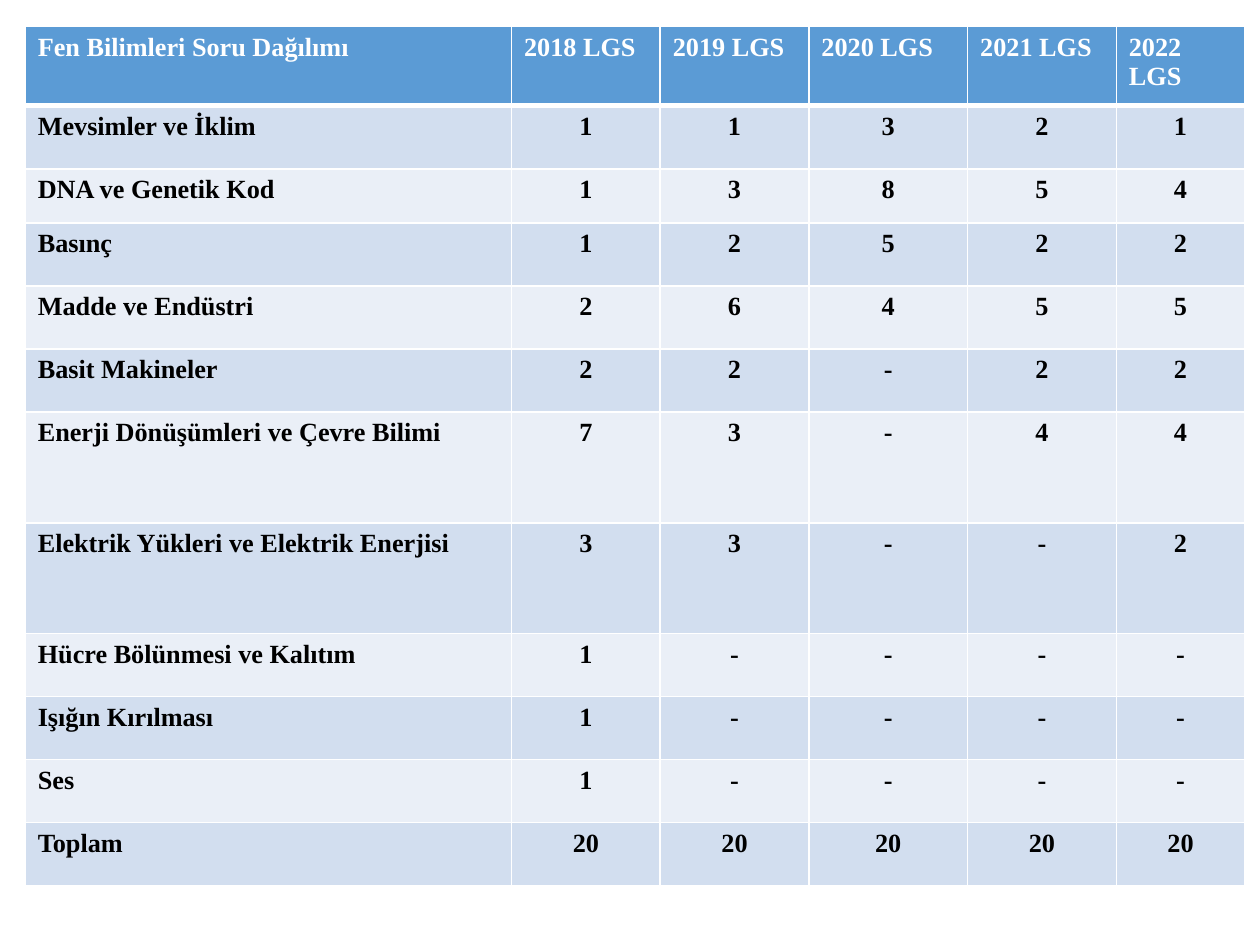
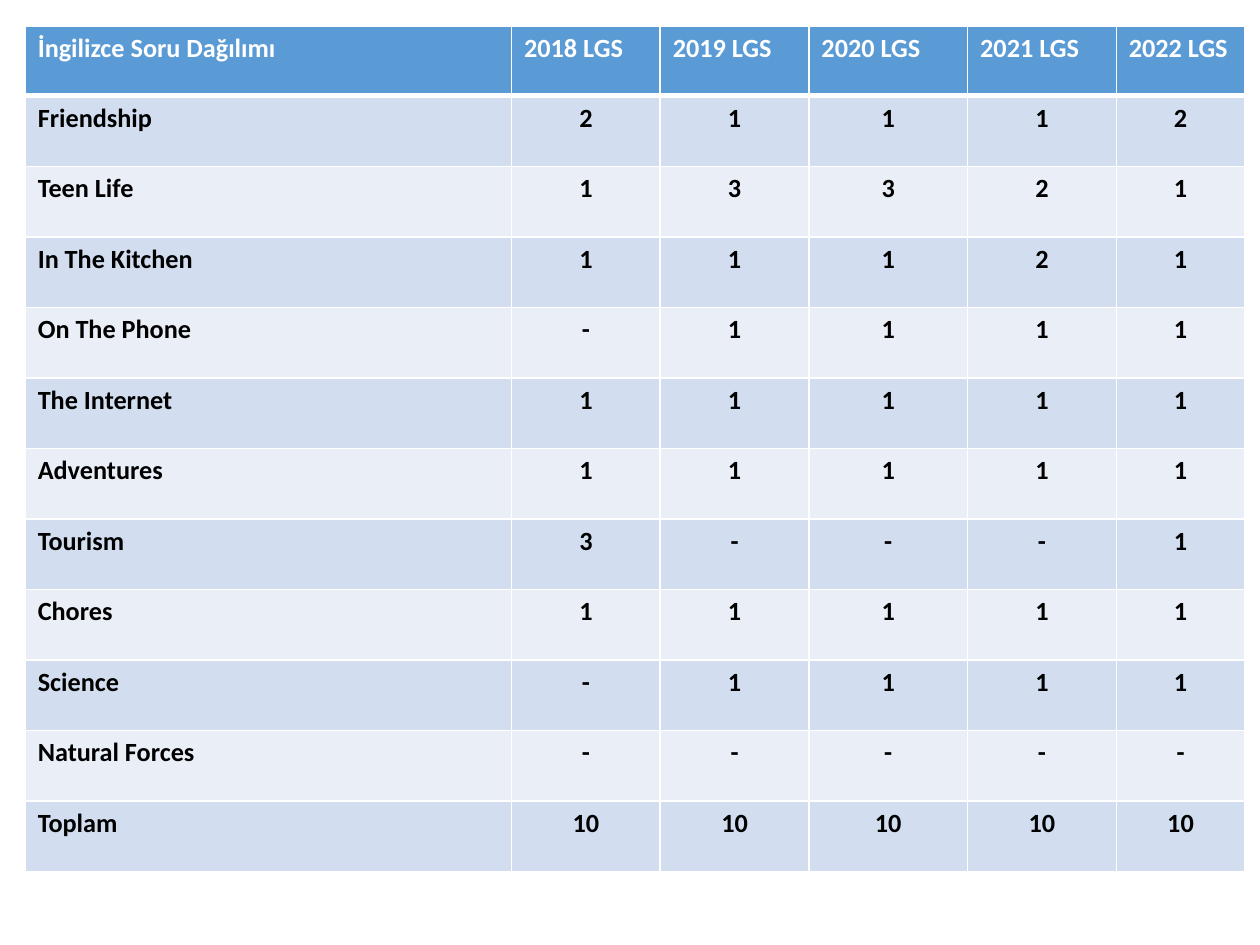
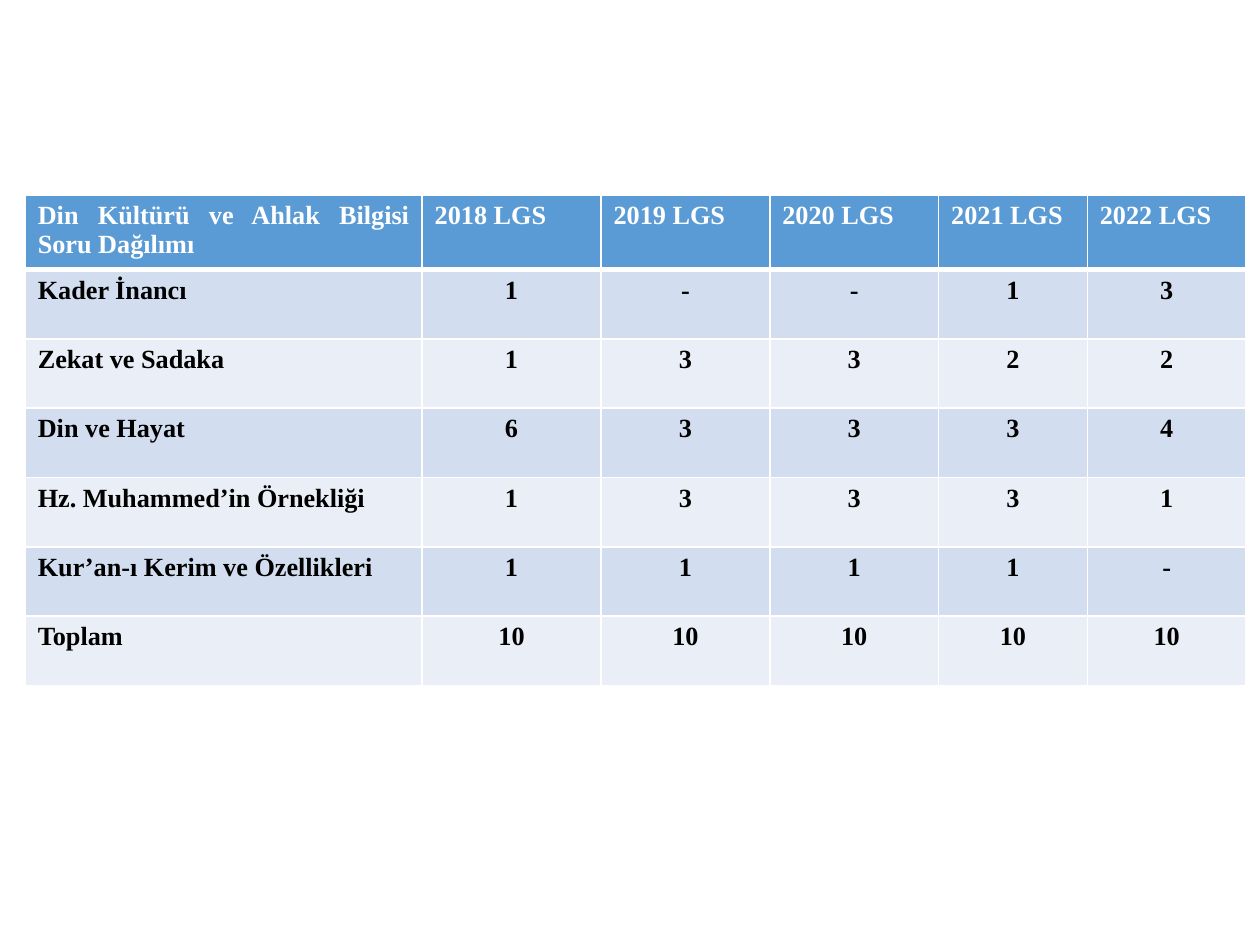
from dataclasses import dataclass

from lxml import etree
from pptx import Presentation
from pptx.dml.color import RGBColor
from pptx.enum.text import PP_ALIGN
from pptx.oxml.ns import qn
from pptx.util import Inches, Pt

LEFT, CENTER, JUSTIFY = PP_ALIGN.LEFT, PP_ALIGN.CENTER, PP_ALIGN.JUSTIFY

COLORS = {
    "header": "5B9BD5",
    "odd_row": "D2DEEF",
    "even_row": "EAEFF7",
    "border": "FFFFFF",
    "header_text": "FFFFFF",
    "body_text": "000000",
}
EXAMS = [f"{year} LGS" for year in range(2018, 2023)]
TABLE_LEFT = 0.2
FONT_SIZE = 15
THIN, THICK = 1, 3
BLANK_LAYOUT = 6
WIDE_TOPIC_COLUMNS = [3.86, 1.18, 1.18, 1.26, 1.18, 1.02]


@dataclass
class Topic:
    name: str
    counts: str


@dataclass
class Distribution:
    title: str
    font: str
    top: float
    column_widths: list[float]
    row_heights: list[float]
    topics: list[Topic]


DISTRIBUTIONS = [
    Distribution(
        "Fen Bilimleri Soru Dağılımı", "Times New Roman", 0.21, WIDE_TOPIC_COLUMNS,
        [0.63, 0.5, 0.43] + [0.5] * 3 + [0.88] * 2 + [0.5] * 4,
        [
            Topic("Mevsimler ve İklim", "1 1 3 2 1"),
            Topic("DNA ve Genetik Kod", "1 3 8 5 4"),
            Topic("Basınç", "1 2 5 2 2"),
            Topic("Madde ve Endüstri", "2 6 4 5 5"),
            Topic("Basit Makineler", "2 2 - 2 2"),
            Topic("Enerji Dönüşümleri ve Çevre Bilimi", "7 3 - 4 4"),
            Topic("Elektrik Yükleri ve Elektrik Enerjisi", "3 3 - - 2"),
            Topic("Hücre Bölünmesi ve Kalıtım", "1 - - - -"),
            Topic("Işığın Kırılması", "1 - - - -"),
            Topic("Ses", "1 - - - -"),
            Topic("Toplam", "20 20 20 20 20"),
        ],
    ),
    Distribution(
        "İngilizce Soru Dağılımı", "Calibri", 0.21, WIDE_TOPIC_COLUMNS,
        [0.55] + [0.56] * 11,
        [
            Topic("Friendship", "2 1 1 1 2"),
            Topic("Teen Life", "1 3 3 2 1"),
            Topic("In The Kitchen", "1 1 1 2 1"),
            Topic("On The Phone", "- 1 1 1 1"),
            Topic("The Internet", "1 1 1 1 1"),
            Topic("Adventures", "1 1 1 1 1"),
            Topic("Tourism", "3 - - - 1"),
            Topic("Chores", "1 1 1 1 1"),
            Topic("Science", "- 1 1 1 1"),
            Topic("Natural Forces", "- - - - -"),
            Topic("Toplam", "10 10 10 10 10"),
        ],
    ),
    Distribution(
        "Din Kültürü ve Ahlak Bilgisi Soru Dağılımı", "Times New Roman", 1.55,
        [3.15, 1.42, 1.34, 1.34, 1.18, 1.26],
        [0.59] + [0.55] * 6,
        [
            Topic("Kader İnancı", "1 - - 1 3"),
            Topic("Zekat ve Sadaka", "1 3 3 2 2"),
            Topic("Din ve Hayat", "6 3 3 3 4"),
            Topic("Hz. Muhammed’in Örnekliği", "1 3 3 3 1"),
            Topic("Kur’an-ı Kerim ve Özellikleri", "1 1 1 1 -"),
            Topic("Toplam", "10 10 10 10 10"),
        ],
    ),
]


def set_borders(cell, row: int) -> None:
    widths = {
        "a:lnL": THIN,
        "a:lnR": THIN,
        "a:lnT": THICK if row == 1 else THIN,
        "a:lnB": THICK if row == 0 else THIN,
    }
    properties = cell._tc.get_or_add_tcPr()
    for tag, width in widths.items():
        line = etree.SubElement(properties, qn(tag), w=str(Pt(width)))
        fill = etree.SubElement(line, qn("a:solidFill"))
        etree.SubElement(fill, qn("a:srgbClr"), val=COLORS["border"])


def format_cell(cell, text: str, row: int, column: int, font_name: str) -> None:
    if row == 0:
        fill_color, text_color = "header", "header_text"
        alignment = JUSTIFY if column == 0 else LEFT
    else:
        fill_color, text_color = "odd_row" if row % 2 else "even_row", "body_text"
        alignment = LEFT if column == 0 else CENTER
    set_borders(cell, row)
    cell.fill.solid()
    cell.fill.fore_color.rgb = RGBColor.from_string(COLORS[fill_color])
    cell.text = text
    paragraph = cell.text_frame.paragraphs[0]
    paragraph.alignment = alignment
    paragraph.font.name = font_name
    paragraph.font.size = Pt(FONT_SIZE)
    paragraph.font.bold = True
    paragraph.font.color.rgb = RGBColor.from_string(COLORS[text_color])


def add_distribution(slide, distribution: Distribution) -> None:
    rows = [[distribution.title, *EXAMS]]
    rows += [[topic.name, *topic.counts.split()] for topic in distribution.topics]
    widths, heights = distribution.column_widths, distribution.row_heights
    table = slide.shapes.add_table(
        len(rows), len(widths), Inches(TABLE_LEFT), Inches(distribution.top),
        Inches(sum(widths)), Inches(sum(heights)),
    ).table
    for column, width in zip(table.columns, widths):
        column.width = Inches(width)
    for row, height in zip(table.rows, heights):
        row.height = Inches(height)
    for row_index, texts in enumerate(rows):
        for column_index, text in enumerate(texts):
            cell = table.cell(row_index, column_index)
            format_cell(cell, text, row_index, column_index, distribution.font)


def main() -> None:
    presentation = Presentation()
    presentation.slide_width = Inches(10)
    presentation.slide_height = Inches(7.5)
    for distribution in DISTRIBUTIONS:
        slide = presentation.slides.add_slide(presentation.slide_layouts[BLANK_LAYOUT])
        add_distribution(slide, distribution)
    presentation.save("out.pptx")


if __name__ == "__main__":
    main()
